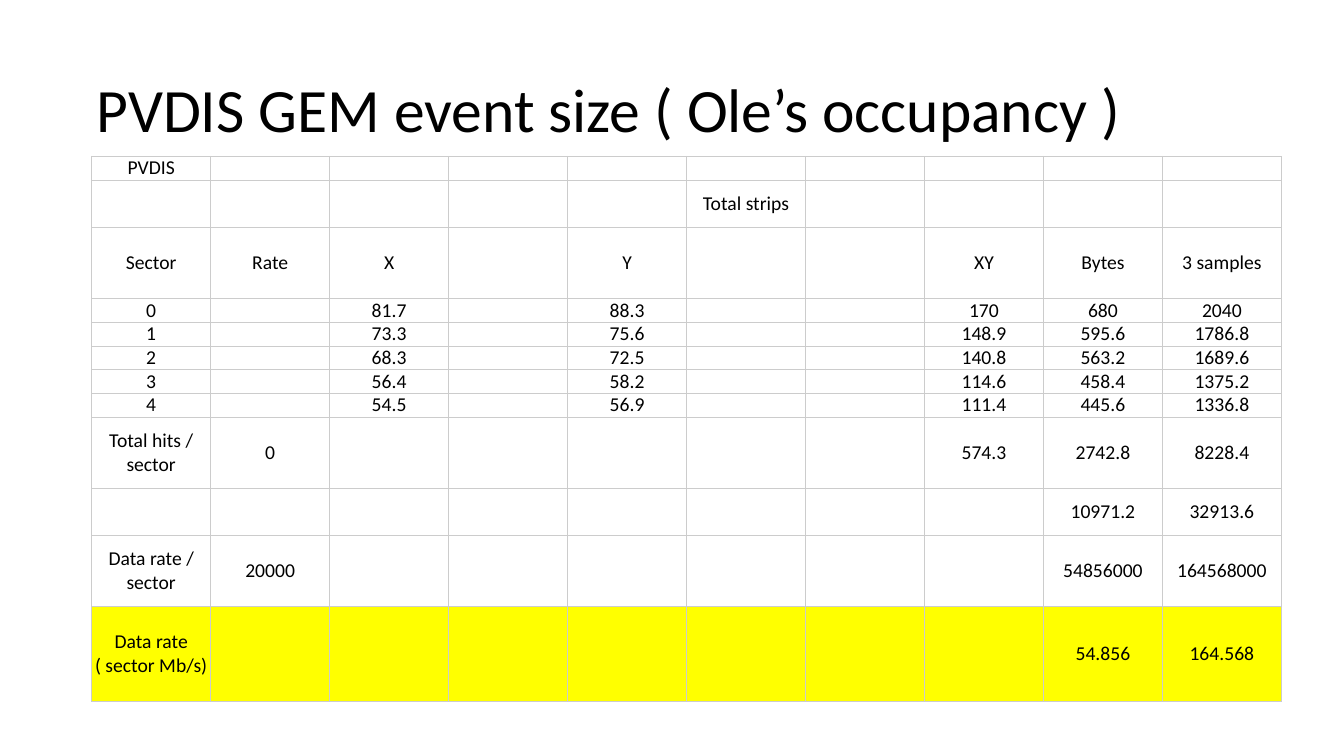
from lxml import etree
from pptx import Presentation
from pptx import util as u
from pptx.dml.color import RGBColor
from pptx.enum import text
from pptx.oxml import ns

BLACK = RGBColor(0x00, 0x00, 0x00)
YELLOW = RGBColor(0xFF, 0xFF, 0x00)
GRID_GREY = RGBColor(0xCC, 0xCC, 0xCC)

COLUMNS = 10
ROW_UNITS = [1, 2, 3, 1, 1, 1, 1, 1, 3, 2, 3, 4]
SECTOR_COLUMNS = [0, 2, 4, 7, 8, 9]
TOTAL_COLUMNS = [0, 1, 7, 8, 9]

# Each row: the columns that hold text, and the text in them
EVENT_SIZES = [
    ([0], ["PVDIS"]),
    ([5], ["Total strips"]),
    ([0, 1, 2, 4, 7, 8, 9], ["Sector", "Rate", "X", "Y", "XY", "Bytes", "3 samples"]),
    (SECTOR_COLUMNS, ["0", "81.7", "88.3", "170", "680", "2040"]),
    (SECTOR_COLUMNS, ["1", "73.3", "75.6", "148.9", "595.6", "1786.8"]),
    (SECTOR_COLUMNS, ["2", "68.3", "72.5", "140.8", "563.2", "1689.6"]),
    (SECTOR_COLUMNS, ["3", "56.4", "58.2", "114.6", "458.4", "1375.2"]),
    (SECTOR_COLUMNS, ["4", "54.5", "56.9", "111.4", "445.6", "1336.8"]),
    (TOTAL_COLUMNS, ["Total hits / sector", "0", "574.3", "2742.8", "8228.4"]),
    ([8, 9], ["10971.2", "32913.6"]),
    ([0, 1, 8, 9], ["Data rate / sector", "20000", "54856000", "164568000"]),
    ([0, 8, 9], ["Data rate ( sector Mb/s)", "54.856", "164.568"]),
]


class EventSizePage:
    """Holds the type style and the current slide."""

    font_name = "Calibri"
    title_size = 44
    cell_size = 14
    column_width = u.Inches(1.18)
    row_unit = u.Inches(5.41 / sum(ROW_UNITS))

    def __init__(self, deck):
        self.page = deck.slides.add_slide(deck.slide_layouts[6])

    def style(self, para, size):
        para.font.name = self.font_name
        para.font.size = u.Pt(size)
        para.font.color.rgb = BLACK

    def title(self, wording, left, top, width, height):
        box = self.page.shapes.add_textbox(*map(u.Inches, (left, top, width, height)))
        frame = box.text_frame
        frame.word_wrap = True
        frame.vertical_anchor = text.MSO_ANCHOR.MIDDLE
        para = frame.paragraphs[0]
        para.text = wording
        para.line_spacing = 0.9
        self.style(para, self.title_size)

    def table(self, rows, left, top, highlight):
        frame = self.page.shapes.add_table(
            len(rows), COLUMNS, u.Inches(left), u.Inches(top),
            self.column_width * COLUMNS, self.row_unit * sum(ROW_UNITS))
        grid = frame.table
        grid.first_row = grid.horz_banding = False
        for column in grid.columns:
            column.width = self.column_width
        for index, (places, words) in enumerate(rows):
            grid.rows[index].height = self.row_unit * ROW_UNITS[index]
            filled = dict(zip(places, words))
            fill = YELLOW if index == highlight else None
            for place in range(COLUMNS):
                self.cell(grid.cell(index, place), filled.get(place, ""), fill)

    def cell(self, cell, wording, fill):
        cell.margin_left = cell.margin_right = u.Inches(0.01)
        cell.margin_top = cell.margin_bottom = 0
        cell.vertical_anchor = text.MSO_ANCHOR.MIDDLE
        para = cell.text_frame.paragraphs[0]
        para.alignment = text.PP_ALIGN.CENTER
        if wording:
            para.text = wording
        else:
            # An empty cell takes its height from the end-of-paragraph size
            end = etree.SubElement(para._p, ns.qn("a:endParaRPr"))
            end.set("sz", str(self.cell_size * 100))
        self.style(para, self.cell_size)
        if fill is None:
            cell.fill.background()
        else:
            cell.fill.solid()
            cell.fill.fore_color.rgb = fill
        self.borders(cell)

    def borders(self, cell):
        properties = cell._tc.get_or_add_tcPr()
        for position, side in enumerate(("lnL", "lnR", "lnT", "lnB")):
            line = etree.Element(ns.qn(f"a:{side}"), w=str(u.Pt(0.5)))
            paint = etree.SubElement(line, ns.qn("a:solidFill"))
            etree.SubElement(paint, ns.qn("a:srgbClr"), val=str(GRID_GREY))
            properties.insert(position, line)


def main():
    deck = Presentation()
    deck.slide_width, deck.slide_height = u.Inches(13.33), u.Inches(7.5)
    sheet = EventSizePage(deck)

    # Heading
    sheet.title("PVDIS GEM event size ( Ole’s occupancy )", 0.86, 0.39, 11.5, 1.45)

    # Event sizes per sector, with the final data rate highlighted
    sheet.table(EVENT_SIZES, 0.91, 1.55, highlight=len(EVENT_SIZES) - 1)

    deck.save("out.pptx")


if __name__ == "__main__":
    main()
